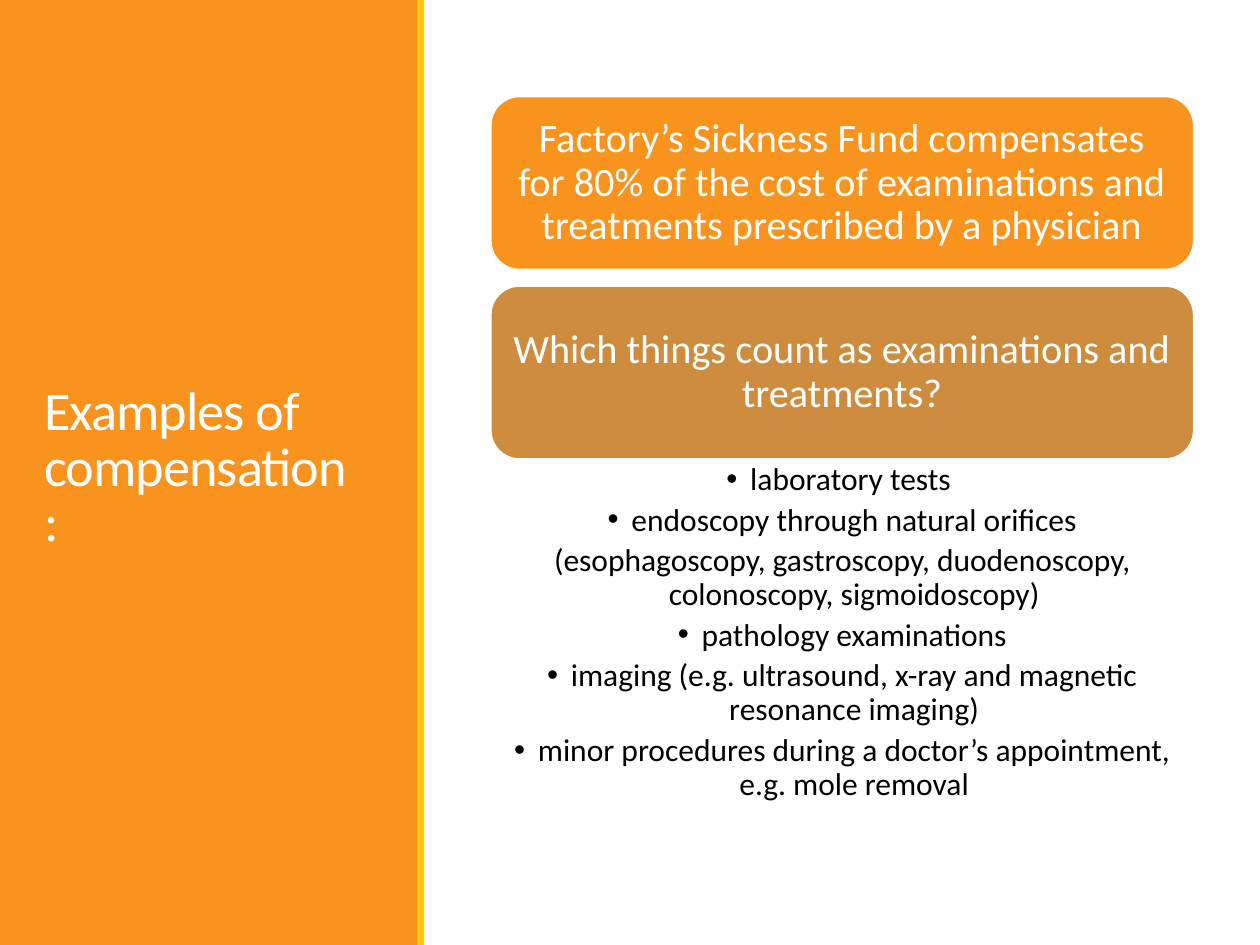
from lxml.etree import SubElement
from pptx import Presentation
from pptx.dml.color import RGBColor
from pptx.enum.shapes import MSO_SHAPE as Shape
from pptx.enum.text import MSO_ANCHOR as Anchor, PP_ALIGN as Align
from pptx.oxml.ns import qn
from pptx.util import Cm, Pt

ORANGE = RGBColor(0xF8, 0x93, 0x1D)
YELLOW = RGBColor(0xFF, 0xCA, 0x08)
BRONZE = RGBColor(0xCE, 0x8D, 0x3E)
WHITE = RGBColor(0xFF, 0xFF, 0xFF)
BLACK = RGBColor(0, 0, 0)

TITLE = "Examples of compensation:"
CARDS = [
    ("Factory’s Sickness Fund compensates for 80% of the cost of examinations "
     "and treatments prescribed by a physician", ORANGE),
    ("Which things count as examinations and treatments?", BRONZE),
]
ITEMS = [
    ("laboratory tests ", True),
    ("endoscopy through natural orifices", True),
    ("(esophagoscopy, gastroscopy, duodenoscopy, colonoscopy, sigmoidoscopy)", False),
    ("pathology examinations", True),
    ("imaging (e.g. ultrasound, x-ray and magnetic resonance imaging)", True),
    ("minor procedures during a doctor’s appointment, e.g. mole removal", True),
]

HEIGHT = 19.05
PANEL_WIDTH, STRIPE_WIDTH = 8.42, 0.13
CARD_LEFT, CARD_TOP, CARD_WIDTH, CARD_HEIGHT, CARD_GAP = 9.89, 1.94, 14.18, 3.5, 0.32
INDENT = 0.48


def add_block(page, kind, left, top, width, height, fill):
    block = page.shapes.add_shape(kind, Cm(left), Cm(top), Cm(width), Cm(height))
    block.shadow.inherit = False
    block.fill.solid()
    block.fill.fore_color.rgb = fill
    block.line.fill.background()
    return block


def add_text(para, text, size, color, align=Align.CENTER, line=0.9, after=0, tracking=0):
    para.alignment = align
    para.line_spacing = line
    para.space_after = Pt(after)
    span = para.add_run()
    span.text = text
    span.font.name = "Calibri"
    span.font.size = Pt(size)
    span.font.color.rgb = color
    if tracking:
        span.font._element.set("spc", str(int(tracking * 100)))


def set_frame(shape, anchor, side, end):
    frame = shape.text_frame
    frame.word_wrap = True
    frame.vertical_anchor = anchor
    frame.margin_left = frame.margin_right = Cm(side)
    frame.margin_top = frame.margin_bottom = Cm(end)
    return frame


def set_bullet(para, bulleted):
    props = para._p.get_or_add_pPr()
    props.set("marL", str(Cm(INDENT)))
    props.set("indent", str(-Cm(INDENT)))
    if bulleted:
        SubElement(props, qn("a:buFont"), typeface="Arial")
        SubElement(props, qn("a:buChar"), char="•")
    else:
        SubElement(props, qn("a:buNone"))


def main():
    deck = Presentation()
    deck.slide_width, deck.slide_height = Cm(25.4), Cm(HEIGHT)
    page = deck.slides.add_slide(deck.slide_layouts[6])

    add_block(page, Shape.RECTANGLE, 0, 0, PANEL_WIDTH, HEIGHT, ORANGE)
    add_block(page, Shape.RECTANGLE, PANEL_WIDTH, 0, STRIPE_WIDTH, HEIGHT, YELLOW)

    title = page.shapes.add_textbox(Cm(0.64), Cm(1.45), Cm(6.83), Cm(16.03))
    frame = set_frame(title, Anchor.MIDDLE, 0.25, 0.13)
    add_text(frame.paragraphs[0], TITLE, 31, WHITE, align=Align.LEFT, line=0.85, tracking=-0.5)

    top = CARD_TOP
    for text, fill in CARDS:
        card = add_block(page, Shape.ROUNDED_RECTANGLE, CARD_LEFT, top, CARD_WIDTH, CARD_HEIGHT, fill)
        card.line.color.rgb = WHITE
        card.line.width = Pt(1.25)
        frame = set_frame(card, Anchor.MIDDLE, 0.25, 0.25)
        add_text(frame.paragraphs[0], text, 23, WHITE)
        top += CARD_HEIGHT + CARD_GAP

    box = page.shapes.add_textbox(Cm(CARD_LEFT), Cm(top - CARD_GAP), Cm(CARD_WIDTH), Cm(7.92))
    frame = set_frame(box, Anchor.TOP, 0.45, 0.08)
    for index, (text, bulleted) in enumerate(ITEMS):
        para = frame.add_paragraph() if index else frame.paragraphs[0]
        add_text(para, text, 18, BLACK, after=3.7)
        set_bullet(para, bulleted)

    deck.save("out.pptx")


if __name__ == "__main__":
    main()
